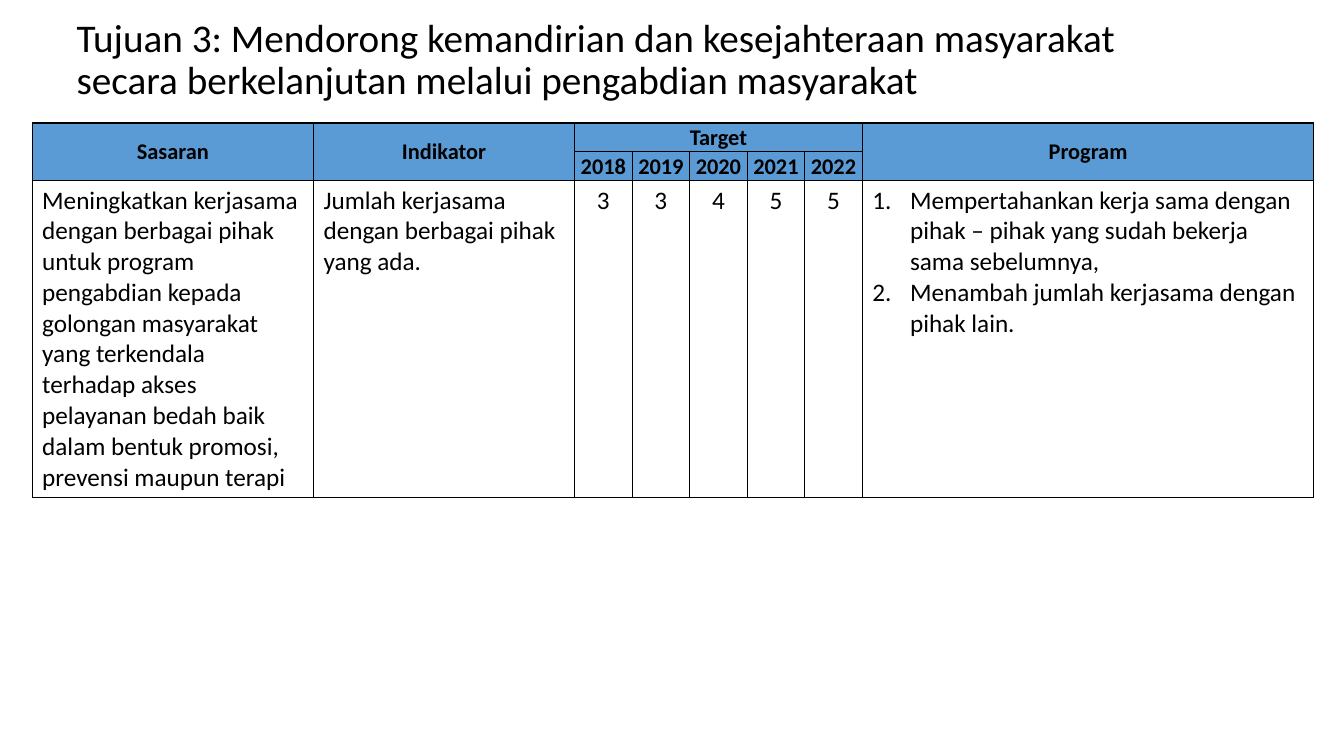
from lxml.etree import SubElement
from pptx import Presentation
from pptx.dml.color import RGBColor
from pptx.enum.text import MSO_ANCHOR, PP_ALIGN
from pptx.oxml.ns import qn
from pptx.util import Cm, Pt

TITLE = ("Tujuan 3: Mendorong kemandirian dan kesejahteraan masyarakat "
         "secara berkelanjutan melalui pengabdian masyarakat")
TARGETS = {"2018": "3", "2019": "3", "2020": "4", "2021": "5", "2022": "5"}
GOAL = ("Meningkatkan kerjasama dengan berbagai pihak untuk program pengabdian "
        "kepada golongan masyarakat yang terkendala terhadap akses pelayanan bedah "
        "baik dalam bentuk promosi, prevensi maupun terapi")
INDICATOR = "Jumlah kerjasama dengan berbagai pihak yang ada."
PROGRAMS = [
    "Mempertahankan kerja sama dengan pihak – pihak yang sudah bekerja sama sebelumnya,",
    "Menambah jumlah kerjasama dengan pihak lain.",
]

FONT = "Calibri"
BLACK = RGBColor(0, 0, 0)
HEADER_BLUE = RGBColor(0x5B, 0x9B, 0xD5)
COLUMN_WIDTHS = [7.09, 6.58] + [1.45] * len(TARGETS) + [11.38]
ROW_HEIGHTS = [0.72, 0.72, 8]
FIRST_YEAR = 2
PROGRAM_COLUMN = len(COLUMN_WIDTHS) - 1
LIST_INDENT = Cm(0.95)


def add_run(paragraph, text, size, bold=False):
    run = paragraph.add_run()
    run.text = text
    font = run.font
    font.name, font.size, font.bold = FONT, Pt(size), bold
    font.color.rgb = BLACK


def add_borders(cell):
    properties = cell._tc.get_or_add_tcPr()
    for side in ("lnL", "lnR", "lnT", "lnB"):
        line = SubElement(properties, qn(f"a:{side}"), w=str(Pt(1)))
        fill = SubElement(line, qn("a:solidFill"))
        SubElement(fill, qn("a:srgbClr"), val=str(BLACK))


def number_paragraph(paragraph):
    properties = paragraph._p.get_or_add_pPr()
    properties.set("marL", str(LIST_INDENT))
    properties.set("indent", str(-LIST_INDENT))
    SubElement(properties, qn("a:buFont"), typeface="+mj-lt")
    SubElement(properties, qn("a:buAutoNum"), type="arabicPeriod")


def fill_header(cell, text):
    cell.vertical_anchor = MSO_ANCHOR.MIDDLE
    paragraph = cell.text_frame.paragraphs[0]
    paragraph.alignment = PP_ALIGN.CENTER
    add_run(paragraph, text, 16, bold=True)


def fill_body(cell, text, alignment=PP_ALIGN.LEFT):
    paragraph = cell.text_frame.paragraphs[0]
    paragraph.alignment = alignment
    add_run(paragraph, text, 18)


def add_title(slide):
    box = slide.shapes.add_textbox(Cm(1.68), Cm(0.64), Cm(28.6), Cm(1.8))
    frame = box.text_frame
    frame.word_wrap = True
    frame.vertical_anchor = MSO_ANCHOR.MIDDLE
    paragraph = frame.paragraphs[0]
    paragraph.line_spacing = 0.9
    add_run(paragraph, TITLE, 28)


def add_target_table(slide):
    table = slide.shapes.add_table(
        len(ROW_HEIGHTS), len(COLUMN_WIDTHS), Cm(0.81), Cm(3.1),
        Cm(sum(COLUMN_WIDTHS)), Cm(sum(ROW_HEIGHTS))).table
    table.first_row = table.horz_banding = False
    for column, width in zip(table.columns, COLUMN_WIDTHS):
        column.width = Cm(width)
    for row_index, height in enumerate(ROW_HEIGHTS):
        table.rows[row_index].height = Cm(height)
        for cell in table.rows[row_index].cells:
            add_borders(cell)
            if row_index < 2:
                cell.fill.solid()
                cell.fill.fore_color.rgb = HEADER_BLUE
                cell.margin_left = cell.margin_right = cell.margin_top = Cm(0.03)
                cell.margin_bottom = 0
            else:
                cell.fill.background()

    for column, text in ((0, "Sasaran"), (1, "Indikator"), (PROGRAM_COLUMN, "Program")):
        table.cell(0, column).merge(table.cell(1, column))
        fill_header(table.cell(0, column), text)
    table.cell(0, FIRST_YEAR).merge(table.cell(0, PROGRAM_COLUMN - 1))
    fill_header(table.cell(0, FIRST_YEAR), "Target")

    fill_body(table.cell(2, 0), GOAL)
    fill_body(table.cell(2, 1), INDICATOR)
    for column, (year, target) in enumerate(TARGETS.items(), FIRST_YEAR):
        fill_header(table.cell(1, column), year)
        fill_body(table.cell(2, column), target, PP_ALIGN.CENTER)

    frame = table.cell(2, PROGRAM_COLUMN).text_frame
    for index, program in enumerate(PROGRAMS):
        paragraph = frame.add_paragraph() if index else frame.paragraphs[0]
        number_paragraph(paragraph)
        add_run(paragraph, program, 18)


def main():
    presentation = Presentation()
    presentation.slide_width, presentation.slide_height = Cm(33.87), Cm(19.05)
    slide = presentation.slides.add_slide(presentation.slide_layouts[6])
    add_title(slide)
    add_target_table(slide)
    presentation.save("out.pptx")


if __name__ == "__main__":
    main()
